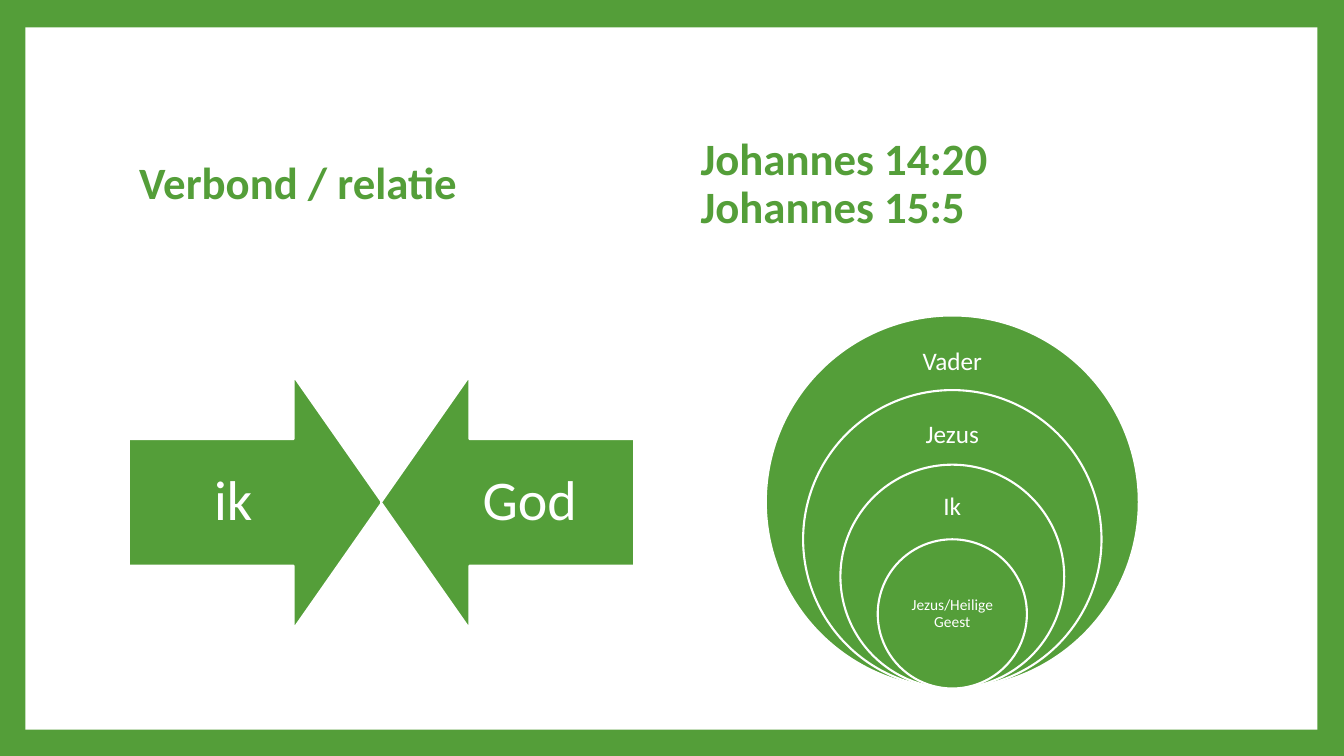
from pptx import Presentation
from pptx.dml.color import RGBColor
from pptx.enum.shapes import MSO_SHAPE as Kind
from pptx.enum.text import MSO_ANCHOR as Anchor, MSO_AUTO_SIZE as Fit, PP_ALIGN as Align
from pptx.util import Cm, Pt

GREEN = RGBColor(0x54, 0x9E, 0x39)
WHITE = RGBColor(0xFF, 0xFF, 0xFF)


def apply(target, values):
    for name, value in values.items():
        setattr(target, name, value)


class Board:
    """Hold the look and the current slide, and add each kind of element."""

    face = "Calibri"
    frame = {"word_wrap": True, "auto_size": Fit.NONE, "vertical_anchor": Anchor.MIDDLE}
    sides = ("margin_left", "margin_top", "margin_right", "margin_bottom")

    def __init__(self, deck):
        self.slide = deck.slides.add_slide(deck.slide_layouts[4])
        self.slide.background.fill.solid()
        self.slide.background.fill.fore_color.rgb = GREEN

    def fill_text(self, frame, lines, size, color, bold, align):
        apply(frame, self.frame)
        frame.text = "\n".join(lines)
        for para in frame.paragraphs:
            apply(para, {"alignment": align, "line_spacing": 0.9, "space_before": Pt(0)})
            for run in para.runs:
                apply(run.font, {"name": self.face, "size": Pt(size), "bold": bold})
                run.font.color.rgb = color

    def place(self, item, left, top, width, height):
        apply(item, {"left": Cm(left), "top": Cm(top),
                     "width": Cm(width), "height": Cm(height)})

    def head(self, index, left, lines):
        item = self.slide.placeholders[index]
        self.place(item, left, 3.58, 13.21, 2.16)
        self.fill_text(item.text_frame, lines, 32, GREEN, True, Align.LEFT)

    def shape(self, kind, left, top, width, height, fill=GREEN, edge=True):
        item = self.slide.shapes.add_shape(kind, Cm(left), Cm(top), Cm(width), Cm(height))
        item.shadow.inherit = False
        item.fill.solid()
        item.fill.fore_color.rgb = fill
        if edge:
            item.line.color.rgb = WHITE
            item.line.width = Pt(1.5)
        else:
            item.line.fill.background()
        return item

    def panel(self):
        item = self.shape(Kind.RECTANGLE, 0.64, 0.69, 32.56, 17.7, WHITE, False)
        self.slide.shapes[0].element.addprevious(item.element)

    def label(self, text, mid, level, width, height, size, inset):
        box = self.slide.shapes.add_textbox(
            Cm(mid - width / 2), Cm(level - height / 2), Cm(width), Cm(height))
        apply(box.text_frame, dict.fromkeys(self.sides, Cm(inset)))
        self.fill_text(box.text_frame, [text], size, WHITE, False, Align.CENTER)

    def arrow(self, left, turn, text, mid):
        item = self.shape(Kind.DOWN_ARROW, left, 9.47, 6.38, 6.38)
        item.rotation = turn
        item.adjustments[0] = 0.5
        item.adjustments[1] = 0.35
        self.label(text, mid, 12.65, 5.26, 3.18, 40, 0.79)

    def rings(self, names, mid, base, step):
        count = len(names)
        for i, name in enumerate(names):
            wide = step * (count + 1 - i)
            self.shape(Kind.OVAL, mid - wide / 2, base - wide, wide, wide)
            if i < count - 1:
                self.label(name, mid, 9.14 + 1.82 * i, 2.62, 1.35, 18, 0.36)
            else:
                self.label(name, mid, base - step, 2.67, step, 11, 0.23)

    def tidy(self):
        for item in list(self.slide.placeholders):
            if not item.text_frame.text:
                item.element.getparent().remove(item.element)


def main():
    deck = Presentation()
    apply(deck, {"slide_width": Cm(33.87), "slide_height": Cm(19.05)})
    board = Board(deck)
    board.panel()
    board.head(1, 3.25, ["Verbond / relatie"])
    board.head(3, 17.4, ["Johannes 14:20", "Johannes 15:5"])
    board.tidy()
    board.rings(["Vader", "Jezus", "Ik", "Jezus/Heilige Geest"], 24, 17.35, 1.88)
    board.arrow(3.25, 270, "ik", 5.88)
    board.arrow(9.6, 90, "God", 13.35)
    deck.save("out.pptx")


if __name__ == "__main__":
    main()
